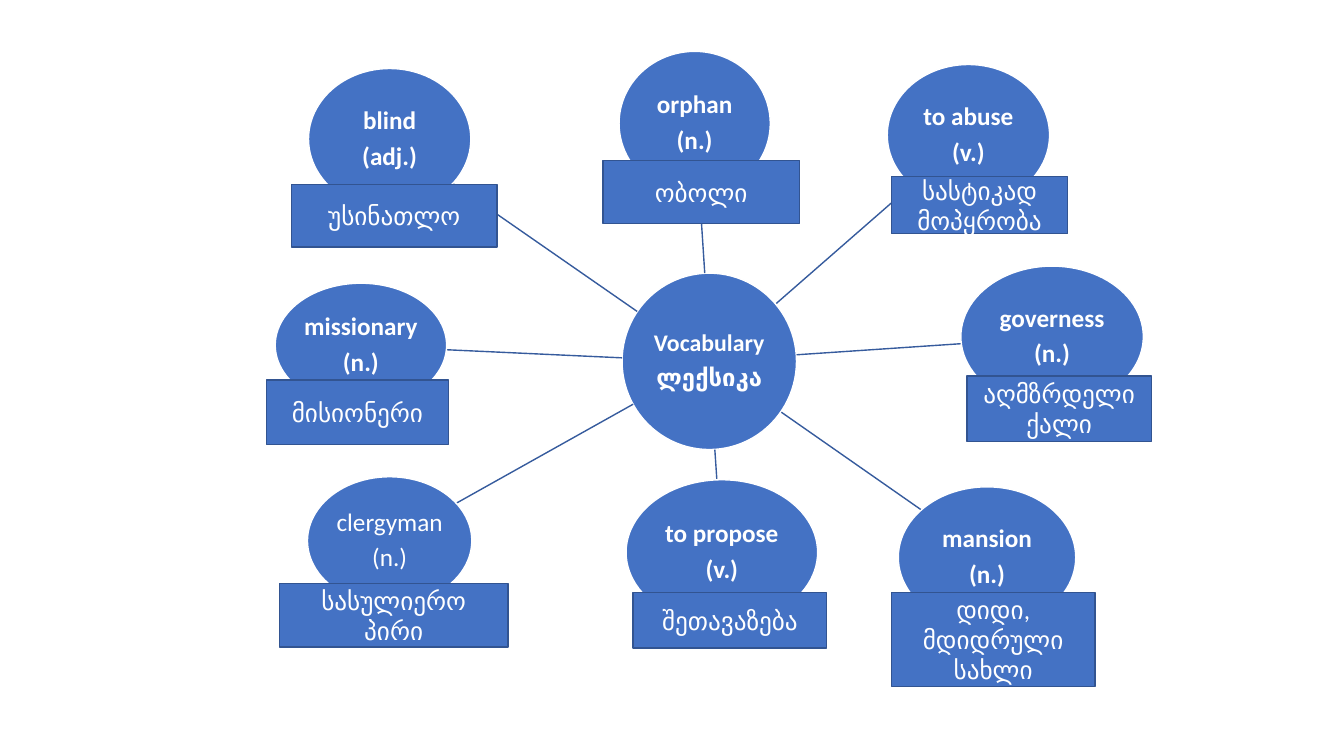
"""Build a vocabulary mind map slide with eight English words and Georgian meanings."""
from lxml.etree import SubElement
from pptx import Presentation
from pptx.dml.color import RGBColor
from pptx.enum.shapes import MSO_CONNECTOR, MSO_SHAPE
from pptx.enum.text import MSO_ANCHOR, PP_ALIGN
from pptx.oxml.ns import qn
from pptx.util import Emu, Pt

PX = 9144
COLORS = {"blue": "4472C4", "white": "FFFFFF", "spoke": "365B9D", "border": "325491"}


def color(name):
    return RGBColor.from_string(COLORS[name])


def add_node(kind, bounds, border, lines, size=18, bold=False):
    box = page.shapes.add_shape(kind, *[Emu(value * PX) for value in bounds])
    box.shadow.inherit = False
    box.fill.solid()
    box.fill.fore_color.rgb = color("blue")
    box.line.color.rgb = color(border)
    box.line.width = Pt(1)
    frame = box.text_frame
    frame.word_wrap = True
    frame.vertical_anchor = MSO_ANCHOR.MIDDLE
    is_circle = kind == MSO_SHAPE.OVAL
    if is_circle:
        frame.margin_left = frame.margin_right = Emu(PX)
        frame.margin_top = frame.margin_bottom = Emu(PX)
    for index, text in enumerate(lines):
        para = frame.add_paragraph() if index else frame.paragraphs[0]
        para.alignment = PP_ALIGN.CENTER
        if is_circle:
            para.line_spacing = 0.9
            para.space_after = Pt(6)
        span = para.add_run()
        span.text = text
        span.font.name = "Calibri"
        span.font.size = Pt(size)
        span.font.bold = bold
        span.font.color.rgb = color("white")


deck = Presentation()
deck.slide_width = Emu(1333 * PX)
deck.slide_height = Emu(750 * PX)
page = deck.slides.add_slide(deck.slide_layouts[6])

WORDS = [
    ("orphan", "(n.)", (614, 51, 150, 143), (699, 271, 694, 194)),
    ("to abuse", "(v.)", (880, 64, 161, 140), (770, 301, 904, 184)),
    ("governess", "(n.)", (953, 264, 181, 140), (790, 352, 953, 341)),
    ("mansion", "(n.)", (891, 483, 176, 140), (775, 409, 914, 506)),
    ("to propose", "(v.)", (621, 476, 190, 144), (709, 446, 711, 476)),
    ("clergyman", "(n.)", (305, 473, 163, 127), (628, 401, 453, 499)),
    ("missionary", "(n.)", (273, 281, 170, 123), (617, 355, 443, 347)),
    ("blind", "(adj.)", (306, 68, 161, 140), (632, 309, 449, 182)),
]
MEANINGS = [
    ("უსინათლო", (289, 183, 204, 62)),
    ("ობოლი", (598, 159, 195, 63)),
    ("სასტიკად მოპყრობა", (884, 175, 175, 57)),
    ("აღმზრდელი ქალი", (959, 373, 183, 65)),
    ("დიდი, მდიდრული სახლი", (884, 588, 202, 93)),
    ("შეთავაზება", (628, 588, 192, 55)),
    ("სასულიერო პირი", (277, 579, 227, 63)),
    ("მისიონერი", (264, 377, 181, 64)),
]

add_node(MSO_SHAPE.OVAL, (617, 271, 173, 175), "white",
         ["Vocabulary", "ლექსიკა"], size=17, bold=True)

for word, part, bounds, ends in WORDS:
    spoke = page.shapes.add_connector(
        MSO_CONNECTOR.STRAIGHT, *[Emu(value * PX) for value in ends])
    spoke.line.color.rgb = color("spoke")
    spoke.line.width = Pt(1)
    SubElement(spoke._element.spPr, qn("a:effectLst"))
    add_node(MSO_SHAPE.OVAL, bounds, "white", [word, part], bold=word != "clergyman")

for meaning, bounds in MEANINGS:
    add_node(MSO_SHAPE.RECTANGLE, bounds, "border", [meaning])

deck.save("out.pptx")
